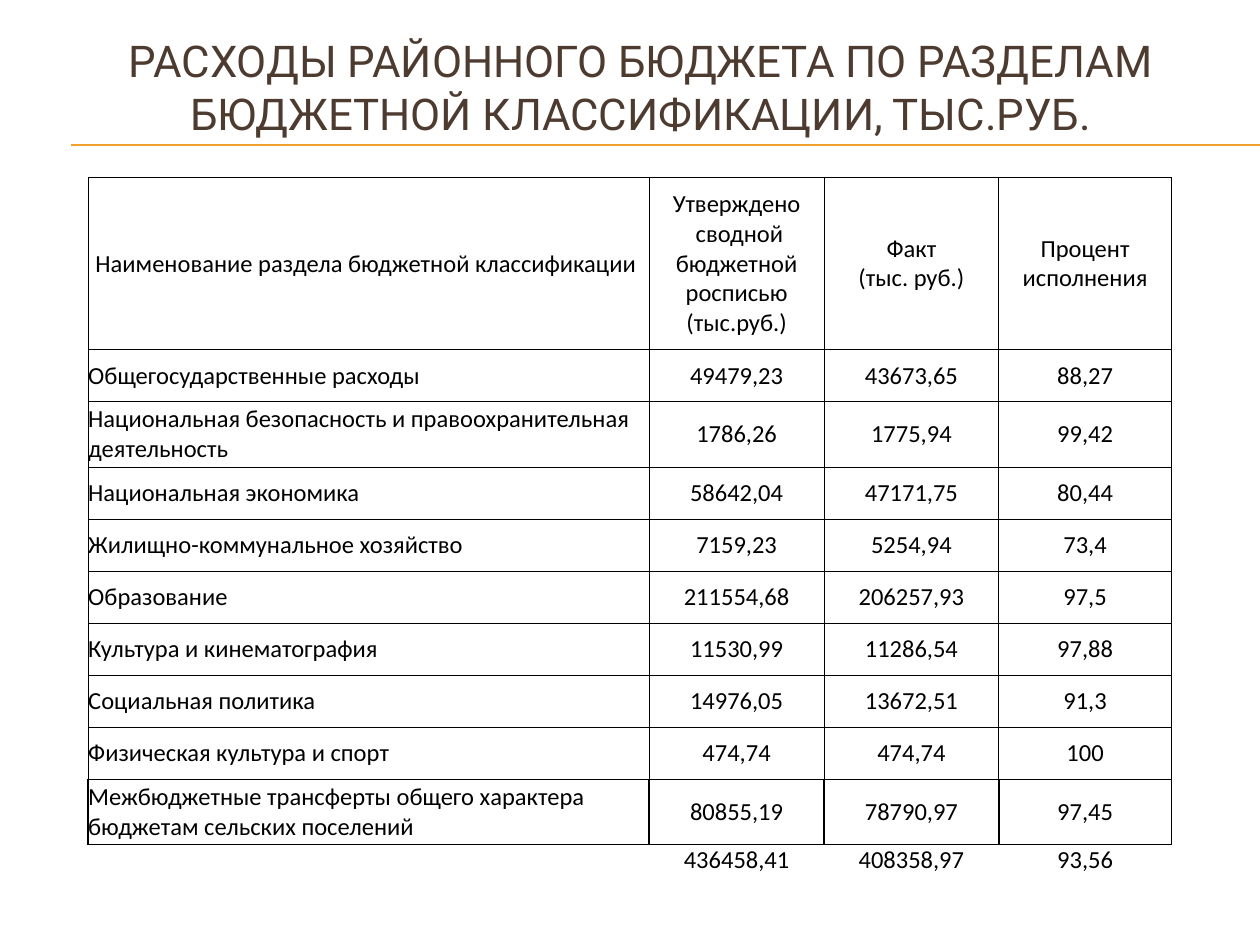
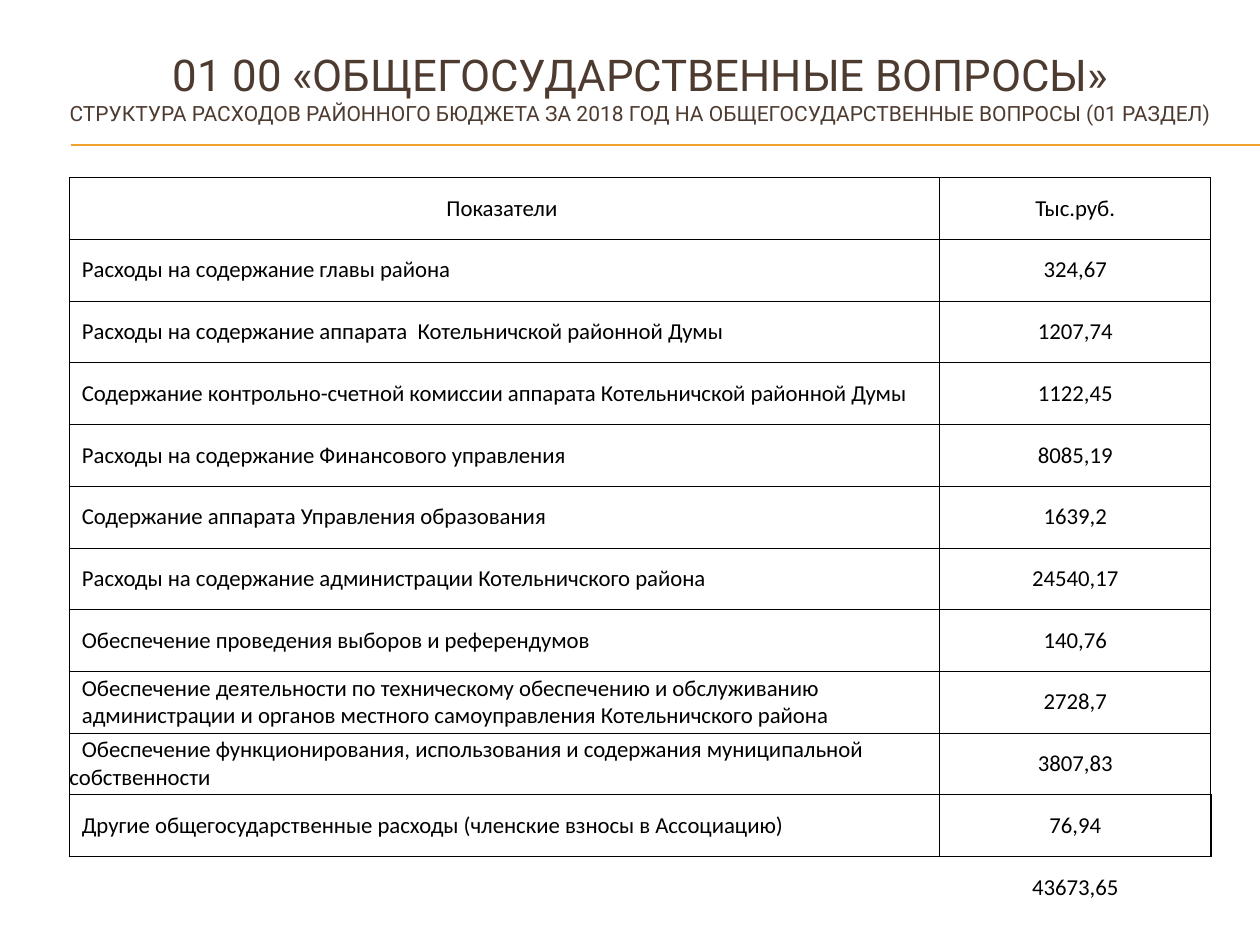
from lxml.etree import SubElement
from pptx import Presentation
from pptx.dml.color import RGBColor
from pptx.enum.shapes import MSO_CONNECTOR
from pptx.enum.text import MSO_ANCHOR, MSO_AUTO_SIZE, PP_ALIGN
from pptx.oxml.ns import qn
from pptx.util import Pt

# Shared look
BROWN, GOLD, BLACK = "4E3B30", "F0A22E", "000000"
HEAD, BODY = "Roboto", "Calibri"
THIN, THICK = 0.5, 1
SIDES = ("L", "R", "T", "B")
TOP = 101.5
INSET = 7.2

# Slide 1: sections of the budget
SECTIONS = [
    ("Наименование раздела бюджетной классификации ",
     "Утверждено\n сводной бюджетной росписью\n(тыс.руб.)",
     "Факт\n(тыс. руб.)", "Процент исполнения"),
    ("Общегосударственные расходы", "49479,23", "43673,65", "88,27"),
    ("Национальная безопасность и правоохранительная деятельность",
     "1786,26", "1775,94", "99,42"),
    ("Национальная экономика", "58642,04", "47171,75", "80,44"),
    ("Жилищно-коммунальное хозяйство", "7159,23", "5254,94", "73,4"),
    ("Образование", "211554,68", "206257,93", "97,5"),
    ("Культура и кинематография", "11530,99", "11286,54", "97,88"),
    ("Социальная политика", "14976,05", "13672,51", "91,3"),
    ("Физическая культура и спорт", "474,74", "474,74", "100"),
    ("Межбюджетные трансферты общего характера бюджетам сельских поселений",
     "80855,19", "78790,97", "97,45"),
    ("", "436458,41", "408358,97", "93,56"),
]

# Slide 2: general state matters
MATTERS = [
    ("Показатели ", "Тыс.руб."),
    ("Расходы на содержание главы района", "324,67"),
    ("Расходы на содержание аппарата  Котельничской районной Думы", "1207,74"),
    ("Содержание контрольно-счетной комиссии аппарата Котельничской районной Думы",
     "1122,45"),
    ("Расходы на содержание Финансового управления", "8085,19"),
    ("Содержание аппарата Управления образования", "1639,2"),
    ("Расходы на содержание администрации Котельничского района", "24540,17"),
    ("Обеспечение проведения выборов и референдумов", "140,76"),
    ("Обеспечение деятельности по техническому обеспечению и обслуживанию "
     "администрации и органов местного самоуправления Котельничского района",
     "2728,7"),
    ("Обеспечение функционирования, использования и содержания муниципальной "
     "собственности", "3807,83"),
    ("Другие общегосударственные расходы (членские взносы в Ассоциацию)", "76,94"),
    ("", "43673,65"),
]
HANGING = 8  # row whose wrapped line keeps the inset


def paint(font, name, size, color):
    font.name, font.size = name, Pt(size)
    font.color.rgb = RGBColor.from_string(color)


def add_rule(slide, y):
    line = slide.shapes.add_connector(
        MSO_CONNECTOR.STRAIGHT, Pt(40.5), Pt(y), Pt(720), Pt(y))
    line.line.color.rgb = RGBColor.from_string(GOLD)
    line.line.width = Pt(0.75)
    SubElement(line._element.spPr, qn("a:effectLst"))


def add_page(deck, text, sizes):
    """Slide with the double gold rule and a centred title."""
    slide = deck.slides.add_slide(deck.slide_layouts[5])
    for y in (82.8, 83.3):
        add_rule(slide, y)
    title = slide.shapes.title
    title.left, title.top, title.width, title.height = map(Pt, (24, 16.5, 684, 66))
    frame = title.text_frame
    frame.text = text
    frame.auto_size = MSO_AUTO_SIZE.NONE
    frame.vertical_anchor = MSO_ANCHOR.MIDDLE
    par = frame.paragraphs[0]
    par.alignment = PP_ALIGN.CENTER
    for run, size in zip(par.runs, sizes):
        paint(run.font, HEAD, size, BROWN)
    return slide


def set_edges(cell, widths):
    """Draw the cell's borders; a width of 0 means no line."""
    props = cell._tc.get_or_add_tcPr()
    for spot, (side, width) in enumerate(zip(SIDES, widths)):
        edge = SubElement(props, qn(f"a:ln{side}"), w=str(Pt(width)))
        if width:
            fill = SubElement(edge, qn("a:solidFill"))
            SubElement(fill, qn("a:srgbClr"), val=BLACK)
        else:
            SubElement(edge, qn("a:noFill"))
        props.insert(spot, edge)


def fill_cell(cell, text, size, align):
    cell.margin_left = cell.margin_right = 0
    cell.margin_top = cell.margin_bottom = 0
    cell.vertical_anchor = MSO_ANCHOR.MIDDLE
    cell.text = text
    for par in cell.text_frame.paragraphs:
        par.alignment = align
        for run in par.runs:
            paint(run.font, BODY, size, BLACK)
        if not par.runs:
            SubElement(par._p, qn("a:endParaRPr"), sz=str(size * 100))


def add_grid(slide, left, cols, heights, rows, size, span=1):
    """Ruled table; labels cover the first span columns, totals stand below."""
    table = slide.shapes.add_table(
        len(rows), len(cols), Pt(left), Pt(TOP), Pt(sum(cols)),
        Pt(sum(heights))).table
    table.first_row = table.horz_banding = False
    for col, width in zip(table.columns, cols):
        col.width = Pt(width)
    for row, height in zip(table.rows, heights):
        row.height = Pt(height)
    total = len(rows) - 1
    for r, (label, *values) in enumerate(rows):
        texts = [label] + [""] * (span - 1) + values
        for c, text in enumerate(texts):
            cell = table.cell(r, c)
            left_side = 0 < r and c < span
            fill_cell(cell, text, size, PP_ALIGN.LEFT if left_side else PP_ALIGN.CENTER)
            cell.fill.background()
            if r == total:
                set_edges(cell, (0, 0, THICK, 0))
            elif r == total - 1:
                set_edges(cell, (THICK, THICK, THIN, THICK))
            else:
                set_edges(cell, (THIN,) * 4)
        if span > 1 and r < total:
            table.cell(r, 0).merge(table.cell(r, span - 1))
    return table


def indent(cell, margin, first):
    props = cell.text_frame.paragraphs[0]._p.get_or_add_pPr()
    props.set("marL", str(Pt(margin)))
    props.set("indent", str(Pt(first)))


def main():
    deck = Presentation()
    deck.slide_width, deck.slide_height = Pt(720), Pt(540)

    # Budget by section
    slide = add_page(
        deck, "РАСХОДЫ РАЙОННОГО БЮДЖЕТА ПО РАЗДЕЛАМ БЮДЖЕТНОЙ КЛАССИФИКАЦИИ, "
        "ТЫС.РУБ.", [25])
    one, two = 29.7, 37.6
    heights = [98.3, one, two] + [one] * 6 + [two, 17.3]
    add_grid(slide, 50.4, [106.5, 105.6, 108.5, 100, 99.8, 98.7], heights,
             SECTIONS, 14, span=3)

    # General state matters
    slide = add_page(
        deck, "01 00 «ОБЩЕГОСУДАРСТВЕННЫЕ ВОПРОСЫ»\v"
        "СТРУКТУРА РАСХОДОВ РАЙОННОГО БЮДЖЕТА ЗА 2018 ГОД НА "
        "ОБЩЕГОСУДАРСТВЕННЫЕ ВОПРОСЫ (01 РАЗДЕЛ)", [25, 12])
    table = add_grid(slide, 39.6, [497.3, 155], [35.27] * len(MATTERS), MATTERS, 13)
    for r in range(1, len(MATTERS) - 1):
        indent(table.cell(r, 0), *((INSET, 0) if r == HANGING else (0, INSET)))

    deck.save("out.pptx")


if __name__ == "__main__":
    main()
